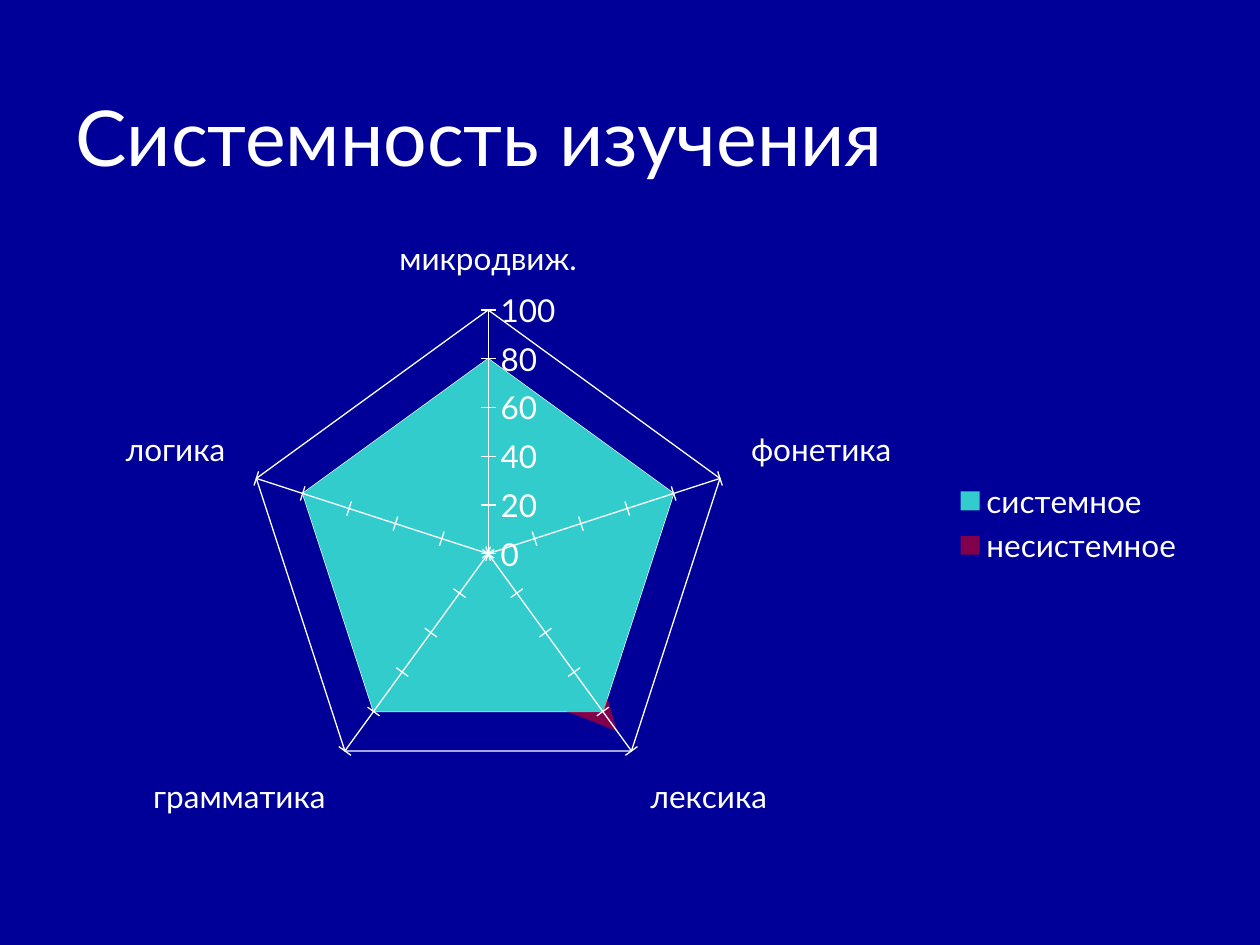
from lxml import etree
from pptx import Presentation
from pptx.chart.data import CategoryChartData
from pptx.dml.color import RGBColor
from pptx.enum.chart import XL_CHART_TYPE, XL_LEGEND_POSITION, XL_TICK_MARK
from pptx.enum.text import MSO_ANCHOR, PP_ALIGN
from pptx.oxml.ns import qn
from pptx.util import Pt

RADAR_FILLED = XL_CHART_TYPE.RADAR_FILLED
LEGEND_RIGHT = XL_LEGEND_POSITION.RIGHT
TICK_CROSS = XL_TICK_MARK.CROSS
MIDDLE = MSO_ANCHOR.MIDDLE
LEFT = PP_ALIGN.LEFT

NAVY = RGBColor(0x00, 0x00, 0x99)
WHITE = RGBColor(0xFF, 0xFF, 0xFF)
TEAL = RGBColor(0x33, 0xCC, 0xCC)
RED = RGBColor(0xFF, 0x00, 0x00)
FONT = "Lato"


def format_font(font, size, color=WHITE):
    font.name = FONT
    font.size = Pt(size)
    font.bold = False
    font.color.rgb = color


def write_text(shape, text, size=18, color=WHITE, align=LEFT, anchor=MIDDLE):
    frame = shape.text_frame
    frame.word_wrap = True
    frame.vertical_anchor = anchor
    paragraph = frame.paragraphs[0]
    paragraph.alignment = align
    run = paragraph.add_run()
    run.text = text
    format_font(run.font, size, color)


presentation = Presentation()
presentation.slide_width = Pt(720)
presentation.slide_height = Pt(540)
slide = presentation.slides.add_slide(presentation.slide_layouts[5])
slide.background.fill.solid()
slide.background.fill.fore_color.rgb = NAVY

# Title
title = slide.shapes.title
title.left, title.top, title.width, title.height = Pt(36), Pt(23), Pt(648), Pt(109)
write_text(title, "Системность изучения", size=44)

# Radar chart
chart_data = CategoryChartData()
chart_data.categories = ["микродвиж.", "фонетика", "лексика", "грамматика", "логика"]
chart_data.add_series("системное", [80, 80, 80, 80, 80])
chart_data.add_series("несистемное", [20, 30, 90, 50, 30])
chart = slide.shapes.add_chart(
    RADAR_FILLED, Pt(36), Pt(124), Pt(648), Pt(350), chart_data
).chart
chart.has_title = False
format_font(chart.font, 18)
chart.has_legend = True
chart.legend.position = LEGEND_RIGHT
chart.legend.include_in_layout = False
format_font(chart.legend.font, 18)

for axis in (chart.category_axis, chart.value_axis):
    axis.has_major_gridlines = True
    axis.major_tick_mark = TICK_CROSS
    format_font(axis.tick_labels.font, 18)
    for line in (axis.format.line, axis.major_gridlines.format.line):
        line.color.rgb = WHITE
        line.width = Pt(0.75)
chart.value_axis.minimum_scale = 0
chart.value_axis.maximum_scale = 100
chart.value_axis.major_unit = 20

for series, color in zip(chart.plots[0].series, (TEAL, RED)):
    series.format.fill.solid()
    series.format.fill.fore_color.rgb = color
    series.format.line.fill.background()

# The second series is half transparent
series_color = series.format.fill._xPr.find(f"{qn('a:solidFill')}/{qn('a:srgbClr')}")
etree.SubElement(series_color, qn("a:alpha")).set("val", "50000")

# Fixed place of the plot, in fractions of the chart
plot_area = chart._chartSpace.chart.plotArea
layout = plot_area.find(qn("c:layout"))
if layout is None:
    layout = etree.Element(qn("c:layout"))
    plot_area.insert(0, layout)
manual_layout = etree.SubElement(layout, qn("c:manualLayout"))
for tag, value in (
    ("layoutTarget", "inner"), ("xMode", "edge"), ("yMode", "edge"),
    ("x", "0.16"), ("y", "0.15"), ("w", "0.43"), ("h", "0.8"),
):
    etree.SubElement(manual_layout, qn(f"c:{tag}")).set("val", value)

presentation.save("out.pptx")
